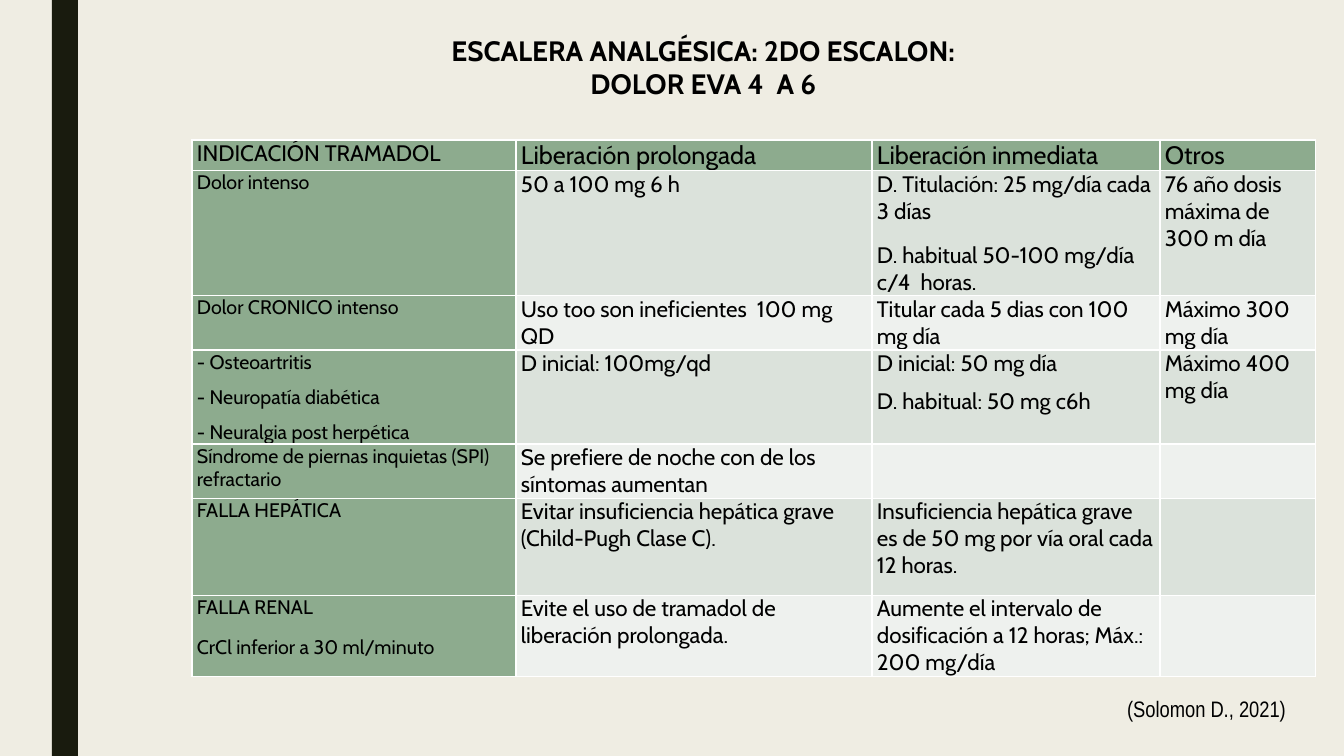
from lxml import etree
from pptx import Presentation
from pptx import util as u
from pptx.dml.color import RGBColor
from pptx.enum import shapes, text
from pptx.oxml.ns import qn

PX = 914400 / 100.8
CREAM = RGBColor(0xEF, 0xED, 0xE3)
DARK = RGBColor(0x19, 0x1B, 0x0E)
BLACK = RGBColor(0, 0, 0)
GREEN = RGBColor(0x8D, 0xAB, 0x8E)
BANDS = RGBColor(0xEE, 0xF1, 0xEE), RGBColor(0xDB, 0xE2, 0xDB)
EDGE = "FFFFFF"
FONT = "Cabin"

TITLE = ["ESCALERA ANALGÉSICA: 2DO ESCALON: ", "DOLOR EVA 4  A 6 "]
SOURCE = ["(Solomon D., 2021) "]
COLS = [324, 356, 288, 156]
# Each row: height in px, gap between paragraphs in pt, cells as lists of paragraphs
ROWS = [
    (30, 12, [["INDICACIÓN TRAMADOL"], ["Liberación prolongada"],
              ["Liberación inmediata"], ["Otros"]]),
    (124, 12, [["Dolor intenso"], ["50 a 100 mg 6 h"],
               ["D. Titulación: 25 mg/día cada 3 días",
                "D. habitual 50-100 mg/día c/4  horas."],
               ["76 año dosis máxima de 300 m día"]]),
    (54, 12, [["Dolor CRONICO intenso"],
              ["Uso too son ineficientes  100 mg QD"],
              ["Titular cada 5 dias con 100 mg día"],
              ["Máximo 300 mg día"]]),
    (93, 8, [["- Osteoartritis", "- Neuropatía diabética",
              "- Neuralgia post herpética"],
             ["D inicial: 100mg/qd"],
             ["D inicial: 50 mg día", "D. habitual: 50 mg c6h"],
             ["Máximo 400 mg día"]]),
    (54, 12, [["Síndrome de piernas inquietas (SPI) refractario"],
              ["Se prefiere de noche con de los síntomas aumentan"], [], []]),
    (97, 12, [["FALLA HEPÁTICA"],
              ["Evitar insuficiencia hepática grave (Child-Pugh Clase C)."],
              ["Insuficiencia hepática grave es de 50 mg por vía oral cada 12 horas."],
              []]),
    (81, 12, [["FALLA RENAL", "CrCl inferior a 30 ml/minuto"],
              ["Evite el uso de tramadol de liberación prolongada."],
              ["Aumente el intervalo de dosificación a 12 horas; Máx.: 200 mg/día"],
              []]),
]


def px(*vals):
    return [u.Emu(round(v * PX)) for v in vals]


def write(frame, lines, size, font=FONT, bold=False, align=None, gap=0):
    for i, line in enumerate(lines):
        para = frame.paragraphs[0] if i == 0 else frame.add_paragraph()
        para.alignment = align
        para.space_after = u.Pt(gap)
        run = para.add_run()
        run.text = line
        run.font.name = font
        run.font.size = u.Pt(size)
        run.font.bold = bold
        run.font.color.rgb = BLACK


def outline(cell):
    """Give the cell thin borders on all sides."""
    props = cell._tc.get_or_add_tcPr()
    for i, side in enumerate("LRTB"):
        line = etree.Element(qn("a:ln" + side), w=str(u.Pt(1)))
        fill = etree.SubElement(line, qn("a:solidFill"))
        etree.SubElement(fill, qn("a:srgbClr"), val=EDGE)
        props.insert(i, line)


def add_grid(slide):
    high = sum(row[0] for row in ROWS)
    grid = slide.shapes.add_table(
        len(ROWS), len(COLS), *px(192, 140, sum(COLS), high)).table
    grid.first_row = grid.horz_banding = False
    for col, wide in zip(grid.columns, COLS):
        col.width = px(wide)[0]
    for r, (tall, gap, cells) in enumerate(ROWS):
        grid.rows[r].height = px(tall)[0]
        for c, lines in enumerate(cells):
            cell = grid.cell(r, c)
            cell.margin_left = cell.margin_right = px(5)[0]
            cell.margin_top = cell.margin_bottom = 0
            cell.fill.solid()
            cell.fill.fore_color.rgb = GREEN if r == 0 or c == 0 else BANDS[r % 2]
            outline(cell)
            size = (18 if r == 0 else 16) - (2 if c == 0 else 0)
            write(cell.text_frame, lines, size, gap=gap)


def main():
    deck = Presentation()
    deck.slide_width, deck.slide_height = px(1344, 756)
    slide = deck.slides.add_slide(deck.slide_layouts[5])
    slide.background.fill.solid()
    slide.background.fill.fore_color.rgb = CREAM

    bar = slide.shapes.add_shape(shapes.MSO_SHAPE.RECTANGLE, *px(52, 0, 26, 756))
    bar.shadow.inherit = False
    bar.fill.solid()
    bar.fill.fore_color.rgb = DARK
    bar.line.fill.background()

    title = slide.shapes.title
    title.left, title.top, title.width, title.height = px(151, 28, 1111, 112)
    frame = title.text_frame
    frame.auto_size = text.MSO_AUTO_SIZE.NONE
    frame.vertical_anchor = text.MSO_ANCHOR.TOP
    write(frame, TITLE, 20, bold=True, align=text.PP_ALIGN.CENTER)

    add_grid(slide)

    note = slide.shapes.add_textbox(*px(965, 690, 336, 37)).text_frame
    note.word_wrap = True
    write(note, SOURCE, 16, font="Arial Narrow", align=text.PP_ALIGN.RIGHT)
    deck.save("out.pptx")


if __name__ == "__main__":
    main()
